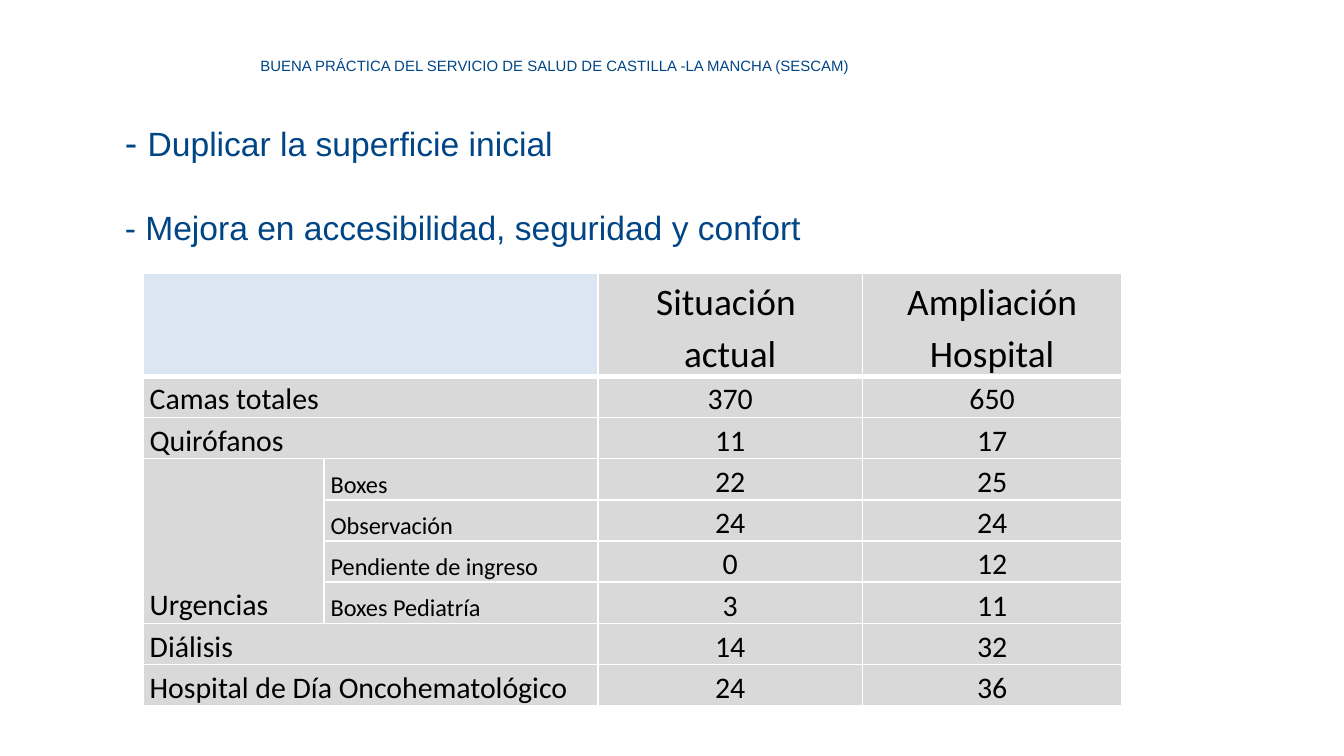
"""Slide on the hospital extension: two goals and a table of resources."""
from lxml.etree import SubElement
from pptx import Presentation
from pptx.dml.color import RGBColor
from pptx.enum.text import MSO_ANCHOR, PP_ALIGN
from pptx.oxml.ns import qn
from pptx.util import Cm, Pt

COLORS = {"title": "004586", "text": "000000", "header": "DCE6F2",
          "cell": "D9D9D9", "border": "FFFFFF"}
TITLE = "BUENA PRÁCTICA DEL SERVICIO DE SALUD DE CASTILLA -LA MANCHA (SESCAM)"
GOALS = [
    [("- ", 20), ("Duplicar la superficie inicial", 18)],
    [("- Mejora en accesibilidad, seguridad y confort", 18)],
]
ROWS = [
    ("", "", "Situación \nactual", "Ampliación Hospital"),
    ("Camas totales", "", "370", "650"),
    ("Quirófanos", "", "11", "17"),
    ("Urgencias", "Boxes", "22", "25"),
    ("", "Observación", "24", "24"),
    ("", "Pendiente de ingreso", "0", "12"),
    ("", "Boxes Pediatría", "3", "11"),
    ("Diálisis", "", "14", "32"),
    ("Hospital de Día Oncohematológico", "", "24", "36"),
]
MERGES = [((i, 0), (i, 1)) for i in (0, 1, 2, 7, 8)] + [((3, 0), (6, 0))]
COL_WIDTHS = (3.42, 5.18, 5.0, 4.9)
HEADER_HEIGHT, ROW_HEIGHT = 1.75, 0.74


def add_run(p, text, size, font, color):
    r = p.add_run()
    r.text = text
    r.font.size, r.font.name = Pt(size), font
    r.font.color.rgb = RGBColor.from_string(COLORS[color])


def add_text(s, box, paragraphs, gap=0):
    tf = s.shapes.add_textbox(*map(Cm, box)).text_frame
    tf.word_wrap = True
    for i, runs in enumerate(paragraphs):
        p = tf.add_paragraph() if i else tf.paragraphs[0]
        if i:
            p.space_before = Pt(gap)
        for text, size in runs:
            add_run(p, text, size, "Arial", "title")


def add_borders(cell, bottom):
    tc_pr = cell._tc.get_or_add_tcPr()
    for side, width in (("L", 1), ("R", 1), ("T", 1), ("B", bottom)):
        ln = SubElement(tc_pr, qn(f"a:ln{side}"), w=str(Pt(width)))
        fill = SubElement(ln, qn("a:solidFill"))
        SubElement(fill, qn("a:srgbClr"), val=COLORS["border"])


def fill_cell(cell, text, row, col):
    add_borders(cell, 1 if row else 3)
    cell.fill.solid()
    color = "header" if row == 0 and col < 2 else "cell"
    cell.fill.fore_color.rgb = RGBColor.from_string(COLORS[color])
    cell.vertical_anchor = MSO_ANCHOR.BOTTOM
    cell.margin_left = cell.margin_right = Cm(0.13)
    cell.margin_top = cell.margin_bottom = 0
    if not text:
        return
    size = 20 if row == 0 else 13 if col == 1 else 16
    tf = cell.text_frame
    for i, line in enumerate(text.split("\n")):
        p = tf.add_paragraph() if i else tf.paragraphs[0]
        p.alignment = PP_ALIGN.CENTER if col > 1 else PP_ALIGN.LEFT
        p.line_spacing = 1.15
        add_run(p, line, size, "Calibri", "text")


def add_resources(s):
    heights = [HEADER_HEIGHT] + [ROW_HEIGHT] * (len(ROWS) - 1)
    table = s.shapes.add_table(
        len(ROWS), len(COL_WIDTHS), Cm(2.7), Cm(5.16),
        Cm(sum(COL_WIDTHS)), Cm(sum(heights))).table
    for column, width in zip(table.columns, COL_WIDTHS):
        column.width = Cm(width)
    for row, height in zip(table.rows, heights):
        row.height = Cm(height)
    for start, end in MERGES:
        table.cell(*start).merge(table.cell(*end))
    for i, texts in enumerate(ROWS):
        for j, text in enumerate(texts):
            fill_cell(table.cell(i, j), text, i, j)


def main():
    prs = Presentation()
    prs.slide_width, prs.slide_height = Cm(25.4), Cm(14.29)
    s = prs.slides.add_slide(prs.slide_layouts[6])
    add_text(s, (2.11, 2.13, 20.19, 2.64), GOALS, gap=23)
    add_resources(s)
    add_text(s, (4.67, 0.94, 12.7, 0.61), [[(TITLE, 8)]])
    prs.save("out.pptx")


if __name__ == "__main__":
    main()
